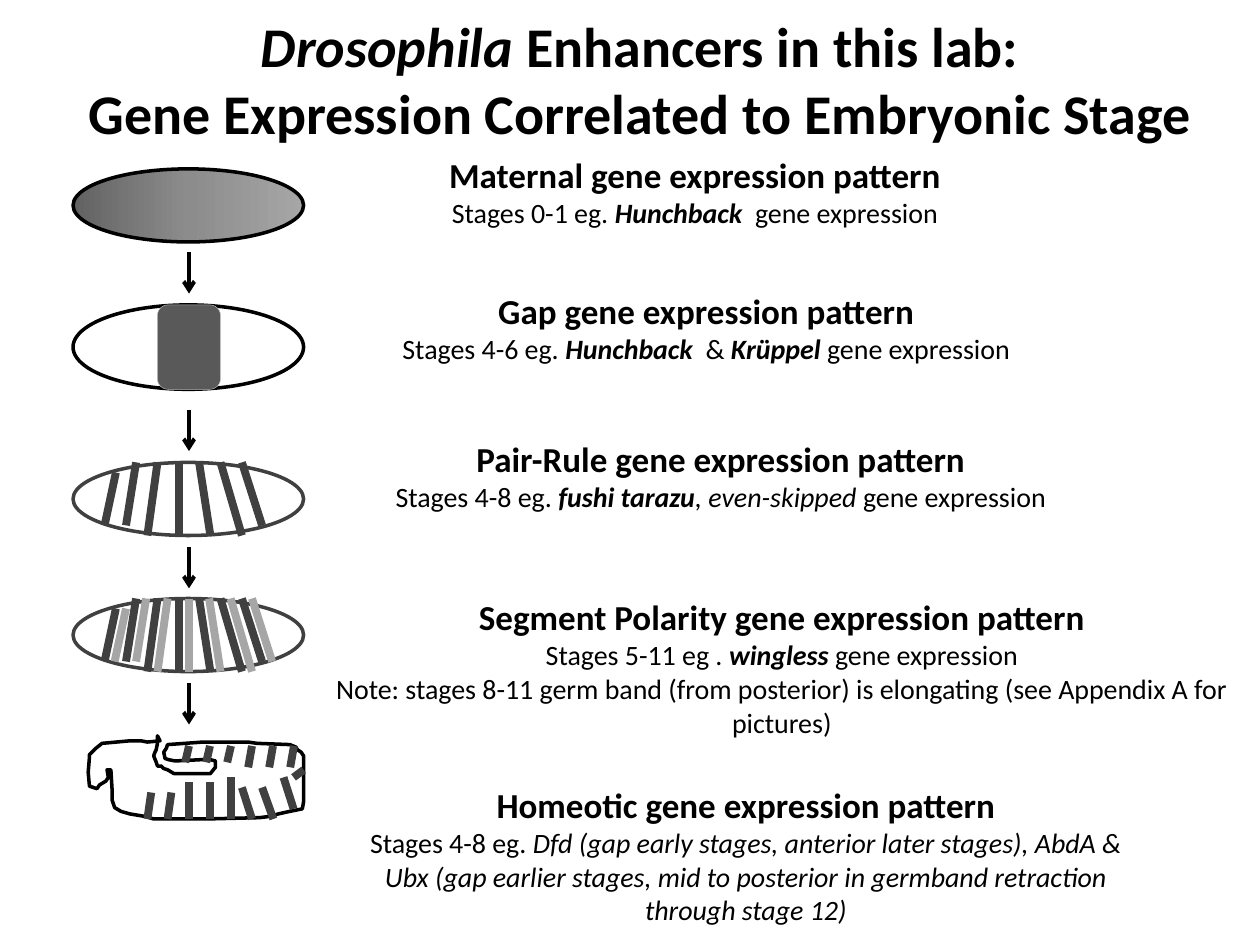
import copy
from dataclasses import dataclass

import pptx
import pptx.util
from pptx.dml.color import RGBColor
from pptx.enum.shapes import MSO_CONNECTOR, MSO_SHAPE
from pptx.enum.text import MSO_ANCHOR, MSO_AUTO_SIZE, PP_ALIGN
from pptx.oxml.ns import qn
from pptx.util import Inches


@dataclass(frozen=True)
class Theme:
    """Colours, font and sizes used on the slide."""
    font: str = "Calibri"
    black: str = "000000"
    white: str = "FFFFFF"
    dark: str = "404040"
    band: str = "595959"
    light: str = "A6A6A6"
    edge: str = "BFBFBF"
    gradient: tuple = ("626262", "8C8C8C", "A6A6A6")
    title: int = 32
    heading: int = 20
    body: int = 16
    outline: float = 2
    stripe: float = 4.5
    arrow: float = 2.25


THEME = Theme()


def add_text(paragraph, text, size, bold=False, italic=False, color=THEME.black):
    """Append one formatted run to a centred paragraph."""
    paragraph.alignment = PP_ALIGN.CENTER
    run = paragraph.add_run()
    run.text = text
    run.font.name = THEME.font
    run.font.size = pptx.util.Pt(size)
    run.font.bold = bold
    run.font.italic = italic
    run.font.color.rgb = RGBColor.from_string(color)


class EmbryoSlide:
    """Holds the theme and the current slide and draws its elements."""

    def __init__(self, presentation, theme):
        self.theme = theme
        self.slide = presentation.slides.add_slide(presentation.slide_layouts[5])

    def title(self, lines, left, top, width, height):
        """Fill the title placeholder with lines of (text, italic) pieces."""
        shape = self.slide.shapes.title
        shape.left, shape.top = Inches(left), Inches(top)
        shape.width, shape.height = Inches(width), Inches(height)
        frame = shape.text_frame
        frame.auto_size = MSO_AUTO_SIZE.NONE
        frame.vertical_anchor = MSO_ANCHOR.MIDDLE
        paragraph = frame.paragraphs[0]
        for index, line in enumerate(lines):
            if index:
                paragraph.add_line_break()
            for text, italic in line:
                add_text(paragraph, text, self.theme.title, bold=True, italic=italic)

    def caption(self, left, top, width, height, heading, *lines, wrap=False):
        """Add a bold heading with lines of (text, style letters) pieces."""
        box = self.slide.shapes.add_textbox(Inches(left), Inches(top), Inches(width), Inches(height))
        frame = box.text_frame
        frame.word_wrap = wrap
        frame.auto_size = MSO_AUTO_SIZE.SHAPE_TO_FIT_TEXT
        add_text(frame.paragraphs[0], heading, self.theme.heading, bold=True)
        for line in lines:
            paragraph = frame.add_paragraph()
            for text, style in line:
                add_text(paragraph, text, self.theme.body, bold="b" in style, italic="i" in style)

    def outline(self, shape, color, width):
        """Set the outline of a shape and drop its shadow."""
        shape.shadow.inherit = False
        shape.line.color.rgb = RGBColor.from_string(color)
        shape.line.width = pptx.util.Pt(width)

    def shape(self, kind, left, top, width, height, fill, line, line_width):
        """Add a preset shape; a tuple of colours makes an even gradient."""
        shape = self.slide.shapes.add_shape(kind, Inches(left), Inches(top), Inches(width), Inches(height))
        self.outline(shape, line, line_width)
        if isinstance(fill, str):
            shape.fill.solid()
            shape.fill.fore_color.rgb = RGBColor.from_string(fill)
            return
        shape.fill.gradient()
        shape.fill.gradient_angle = 0
        stop_list = next(shape._element.spPr.iter(qn("a:gsLst")))
        while len(stop_list) < len(fill):
            stop_list.append(copy.deepcopy(stop_list[0]))
        for index, (stop, color) in enumerate(zip(shape.fill.gradient_stops, fill)):
            stop.position = index / (len(fill) - 1)
            stop.color.rgb = RGBColor.from_string(color)

    def embryo(self, top, height=0.58, fill=THEME.white, line=THEME.black):
        """Add an embryo ellipse in the left column."""
        self.shape(MSO_SHAPE.OVAL, 0.58, top, 1.83, height, fill, line, self.theme.outline)

    def line(self, start_x, start_y, end_x, end_y, color, width, arrow=False):
        """Add a straight line, with an arrowhead at its end if asked."""
        connector = self.slide.shapes.add_connector(
            MSO_CONNECTOR.STRAIGHT, Inches(start_x), Inches(start_y), Inches(end_x), Inches(end_y))
        connector.line.color.rgb = RGBColor.from_string(color)
        connector.line.width = pptx.util.Pt(width)
        if arrow:
            head = connector.line._get_or_add_ln().makeelement(qn("a:tailEnd"), {"type": "arrow"})
            connector.line._get_or_add_ln().append(head)
        properties = connector._element.spPr
        properties.append(properties.makeelement(qn("a:effectLst"), {}))

    def stripes(self, segments, color, shift_x=0.0, shift_y=0.0):
        """Add expression stripes, moved by the given shift."""
        for start_x, start_y, end_x, end_y in segments:
            self.line(start_x + shift_x, start_y + shift_y, end_x + shift_x, end_y + shift_y,
                      color, self.theme.stripe)

    def contour(self, points):
        """Add a closed unfilled outline through the points."""
        vertices = [(Inches(x), Inches(y)) for x, y in points]
        builder = self.slide.shapes.build_freeform(*vertices[0])
        builder.add_line_segments(vertices[1:], close=True)
        shape = builder.convert_to_shape()
        shape.fill.background()
        self.outline(shape, self.theme.black, self.theme.outline)


PAIR_RULE_STRIPES = [
    (0.92, 3.75, 0.83, 4.17), (1.08, 3.67, 1, 4.17), (1.25, 3.67, 1.17, 4.25), (1.42, 3.67, 1.42, 4.25),
    (1.58, 3.67, 1.67, 4.25), (1.75, 3.67, 1.92, 4.25), (1.92, 3.67, 2.08, 4.17),
]
GERM_BAND_STRIPES = [
    (1.2, 6.29, 1.17, 6.5), (1.36, 6.29, 1.33, 6.5), (1.5, 6.21, 1.5, 6.5), (1.67, 6.21, 1.67, 6.5),
    (1.83, 6.17, 1.83, 6.5), (1.92, 6.25, 2, 6.5), (2.08, 6.25, 2.17, 6.5), (2.25, 6.17, 2.33, 6.42),
    (2.41, 6.11, 2.33, 6.17),
]
GERM_BAND_CONTOUR = [
    (1.27, 5.88), (1.17, 5.89), (1.12, 5.88), (1.03, 5.88), (0.81, 5.9), (0.76, 5.94), (0.71, 5.99),
    (0.71, 6.01), (0.7, 6.13), (0.71, 6.24), (0.77, 6.26), (0.79, 6.23), (0.84, 6.2), (0.86, 6.17),
    (0.85, 6.11), (0.88, 6.11), (0.89, 6.27), (0.89, 6.35), (0.91, 6.41), (0.96, 6.44), (1.03, 6.46),
    (1.15, 6.48), (1.22, 6.5), (1.64, 6.5), (2.06, 6.49), (2.14, 6.48), (2.21, 6.46), (2.3, 6.44),
    (2.4, 6.42), (2.41, 6.36), (2.41, 6.27), (2.41, 6), (2.39, 5.97), (2.36, 5.95), (2.35, 5.93),
    (2.3, 5.91), (2.04, 5.9), (1.97, 5.89), (1.61, 5.89), (1.33, 5.91), (1.32, 5.94), (1.3, 5.97),
    (1.31, 6.02), (1.34, 6.03), (1.39, 6.04), (1.59, 6.03), (1.67, 6.03), (1.71, 6.04), (1.71, 6.09),
    (1.67, 6.14), (1.62, 6.14), (1.38, 6.14), (1.33, 6.11), (1.3, 6.1), (1.28, 6.08), (1.25, 6.08),
    (1.24, 6.05), (1.22, 6), (1.23, 5.97), (1.24, 5.95), (1.25, 5.9), (1.25, 5.84),
]


def main():
    """Build and save the slide."""
    presentation = pptx.Presentation()
    presentation.slide_width, presentation.slide_height = Inches(10), Inches(7.5)
    page = EmbryoSlide(presentation, THEME)
    page.title([[("Drosophila ", True), ("Enhancers in this lab:", False)],
                [("Gene Expression Correlated to Embryonic Stage", False)]], 0.58, 0, 9, 1.25)

    page.embryo(1.34, fill=THEME.gradient)
    page.embryo(2.42, height=0.67)
    page.shape(MSO_SHAPE.ROUNDED_RECTANGLE, 1.25, 2.42, 0.5, 0.67, THEME.band, THEME.edge, 0.25)
    page.embryo(3.67, line=THEME.dark)
    page.stripes(PAIR_RULE_STRIPES, THEME.dark)
    page.embryo(4.75, line=THEME.dark)
    page.stripes(PAIR_RULE_STRIPES, THEME.dark, shift_y=1.08)
    page.stripes(PAIR_RULE_STRIPES, THEME.light, shift_x=0.08, shift_y=1.08)
    page.contour(GERM_BAND_CONTOUR)
    page.stripes(GERM_BAND_STRIPES, THEME.dark)
    for index in range(6):
        x = 1.5 + index / 6
        page.stripes([(x, 5.92, x - 0.03, 6.05 if index < 3 else 6.09)], THEME.dark)
    for top in (2, 3.25, 4.34, 5.42):
        page.line(1.5, top, 1.5, top + 0.33, THEME.black, THEME.arrow, arrow=True)

    page.caption(3.44, 1.17, 4.15, 0.71, "Maternal gene expression pattern",
                 [("Stages 0-1 eg. ", ""), ("Hunchback ", "bi"), (" gene expression", "")])
    page.caption(3.06, 2.25, 5.09, 0.71, "Gap gene expression pattern",
                 [("Stages 4-6 eg. ", ""), ("Hunchback", "bi"), ("  & ", ""), ("Krüppel", "bi"),
                  (" gene expression", "")])
    page.caption(3.02, 3.42, 5.4, 0.71, "Pair-Rule gene expression pattern",
                 [("Stages 4-8 eg. ", ""), ("fushi tarazu", "bi"), (", even-skipped ", "i"),
                  ("gene expression", "")])
    page.caption(2.5, 4.68, 7.41, 1.25, "Segment Polarity gene expression pattern",
                 [("Stages 5-11 eg .", ""), (" wingless ", "bi"), ("gene expression", "")],
                 [("Note: stages 8-11 germ band (from posterior) is elongating "
                   "(see Appendix A for pictures)", "")], wrap=True)
    page.caption(2.67, 6.17, 6.5, 1.25, "Homeotic gene expression pattern",
                 [("Stages 4-8 eg. ", ""),
                  ("Dfd (gap early stages, anterior later stages), AbdA & Ubx (gap earlier stages, "
                   "mid to posterior in germband retraction through stage 12)", "i")], wrap=True)
    presentation.save("out.pptx")


if __name__ == "__main__":
    main()
